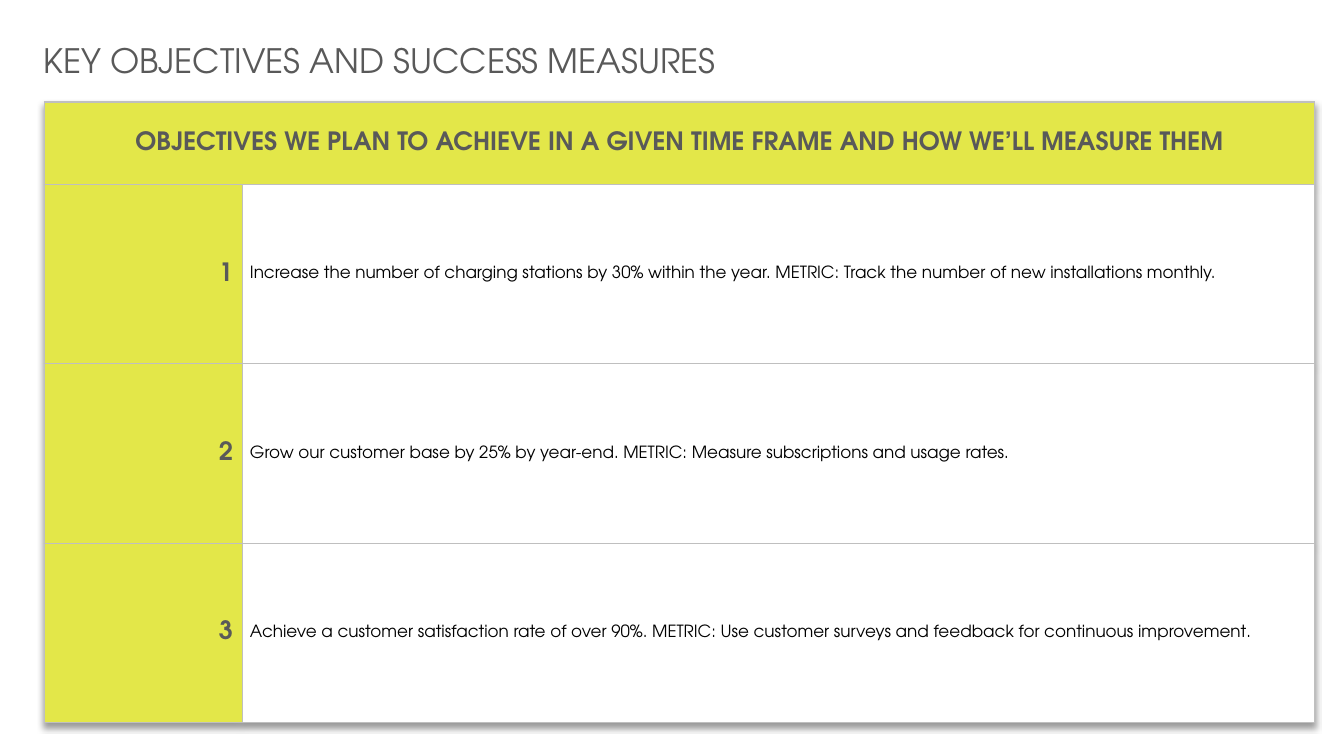
from lxml import etree
from pptx import Presentation
from pptx import util as u
from pptx.dml.color import RGBColor
from pptx.enum import text
from pptx.oxml import parse_xml
from pptx.oxml.ns import nsdecls

COLORS = {"lime": "E3E749", "gray": "595959", "black": "000000",
          "white": "FFFFFF", "border": "BFBFBF"}
FONT = "TeX Gyre Adventor"
TITLE = {"size": u.Pt(24), "bold": False}
HEADING = {"size": u.Pt(18), "bold": True}
BODY = {"size": u.Pt(12), "bold": False}
NUMBER_MARGINS = {"margin_left": u.Cm(0.25), "margin_right": u.Cm(0.25)}
OBJECTIVE_MARGINS = {"margin_left": u.Cm(0.18), "margin_right": u.Cm(0.18),
                     "margin_top": 0, "margin_bottom": 0}
OBJECTIVES = [
    "Increase the number of charging stations by 30% within the year. "
    "METRIC: Track the number of new installations monthly.",
    "Grow our customer base by 25% by year-end. "
    "METRIC: Measure subscriptions and usage rates.",
    "Achieve a customer satisfaction rate of over 90%. "
    "METRIC: Use customer surveys and feedback for continuous improvement.",
]


class SlideBuilder:
    def __init__(self, slide):
        self.slide = slide

    def add_words(self, frame, words, style, color, align=text.PP_ALIGN.LEFT):
        paragraph = frame.paragraphs[0]
        paragraph.alignment = align
        run = paragraph.add_run()
        run.text = words
        for name, value in {"name": FONT, **style}.items():
            setattr(run.font, name, value)
        run.font.color.rgb = RGBColor.from_string(COLORS[color])

    def textbox(self, left, top, width, height, words, style, color):
        shape = self.slide.shapes.add_textbox(
            u.Cm(left), u.Cm(top), u.Cm(width), u.Cm(height))
        shape.text_frame.word_wrap = True
        self.add_words(shape.text_frame, words, style, color)

    def table(self, left, top, widths, heights):
        frame = self.slide.shapes.add_table(
            len(heights), len(widths), u.Cm(left), u.Cm(top),
            u.Cm(sum(widths)), u.Cm(sum(heights)))
        table = frame.table
        for column, width in zip(table.columns, widths):
            column.width = u.Cm(width)
        for row, height in zip(table.rows, heights):
            row.height = u.Cm(height)
        for cell in table.iter_cells():
            self.borders(cell)
        self.shadow(table)
        return table

    def borders(self, cell):
        properties = cell._tc.get_or_add_tcPr()
        for side in ("lnL", "lnR", "lnT", "lnB"):
            properties.append(parse_xml(
                f'<a:{side} {nsdecls("a")} w="{u.Pt(1)}"><a:solidFill>'
                f'<a:srgbClr val="{COLORS["border"]}"/></a:solidFill></a:{side}>'))

    def shadow(self, table):
        effects = etree.fromstring(
            f'<a:effectLst {nsdecls("a")}><a:outerShdw blurRad="{u.Pt(4)}" '
            f'dist="{u.Pt(3)}" dir="5400000" algn="t" rotWithShape="0">'
            f'<a:srgbClr val="{COLORS["black"]}"><a:alpha val="40000"/></a:srgbClr>'
            '</a:outerShdw></a:effectLst>')
        table._tbl.tblPr.insert(0, effects)

    def cell(self, cell, words, style, color, fill, align, margins):
        cell.fill.solid()
        cell.fill.fore_color.rgb = RGBColor.from_string(COLORS[fill])
        layout = {"vertical_anchor": text.MSO_ANCHOR.MIDDLE, **margins}
        for name, value in layout.items():
            setattr(cell, name, value)
        self.add_words(cell.text_frame, words, style, color, align)


def main():
    presentation = Presentation()
    presentation.slide_width = u.Cm(33.87)
    presentation.slide_height = u.Cm(19.05)
    builder = SlideBuilder(
        presentation.slides.add_slide(presentation.slide_layouts[6]))
    builder.textbox(0.84, 0.89, 20.52, 1.27,
                    "KEY OBJECTIVES AND SUCCESS MEASURES", TITLE, "gray")

    table = builder.table(1.12, 2.57, [5, 27], [2.08] + [4.52] * len(OBJECTIVES))
    header = table.cell(0, 0)
    header.merge(table.cell(0, 1))
    builder.cell(
        header,
        "OBJECTIVES WE PLAN TO ACHIEVE IN A GIVEN TIME FRAME AND HOW WE’LL MEASURE THEM",
        HEADING, "gray", "lime", text.PP_ALIGN.CENTER, NUMBER_MARGINS)
    for number, objective in enumerate(OBJECTIVES, 1):
        builder.cell(table.cell(number, 0), str(number), HEADING, "gray", "lime",
                     text.PP_ALIGN.RIGHT, NUMBER_MARGINS)
        builder.cell(table.cell(number, 1), objective, BODY, "black", "white",
                     text.PP_ALIGN.LEFT, OBJECTIVE_MARGINS)
    presentation.save("out.pptx")


if __name__ == "__main__":
    main()
